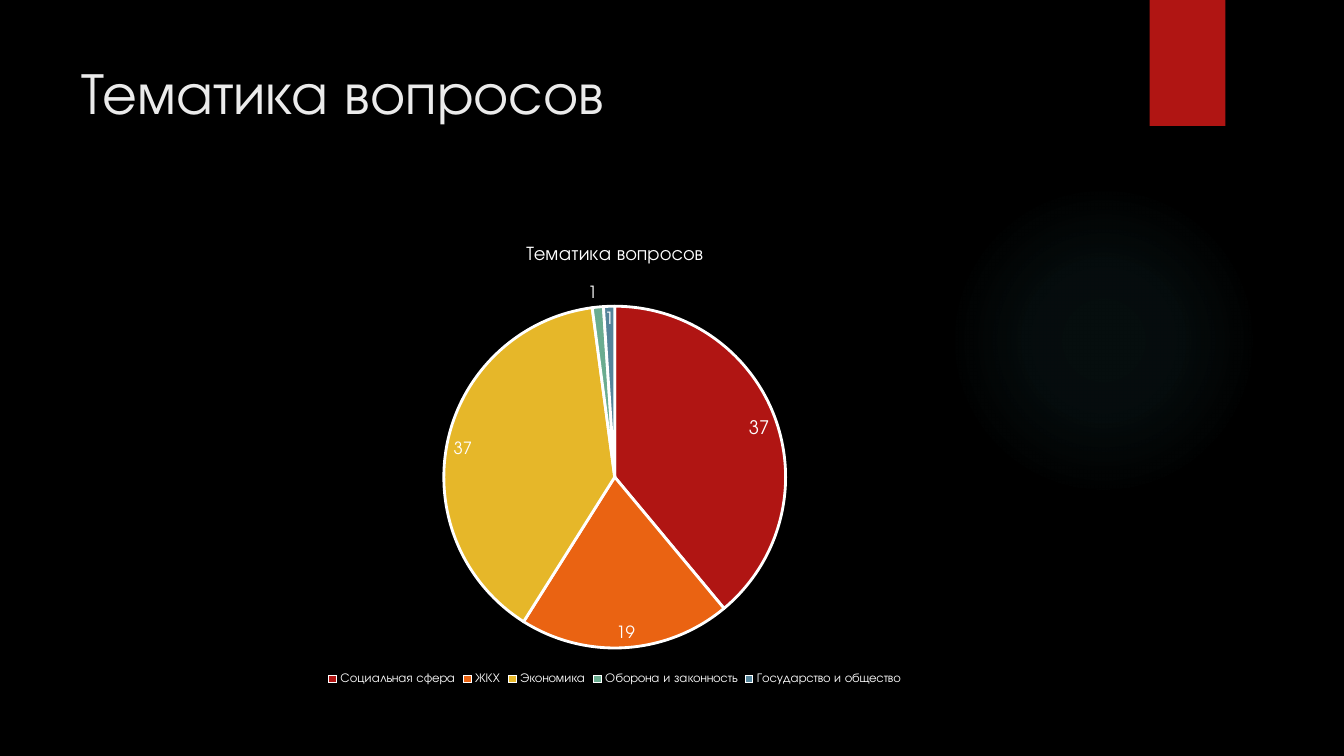
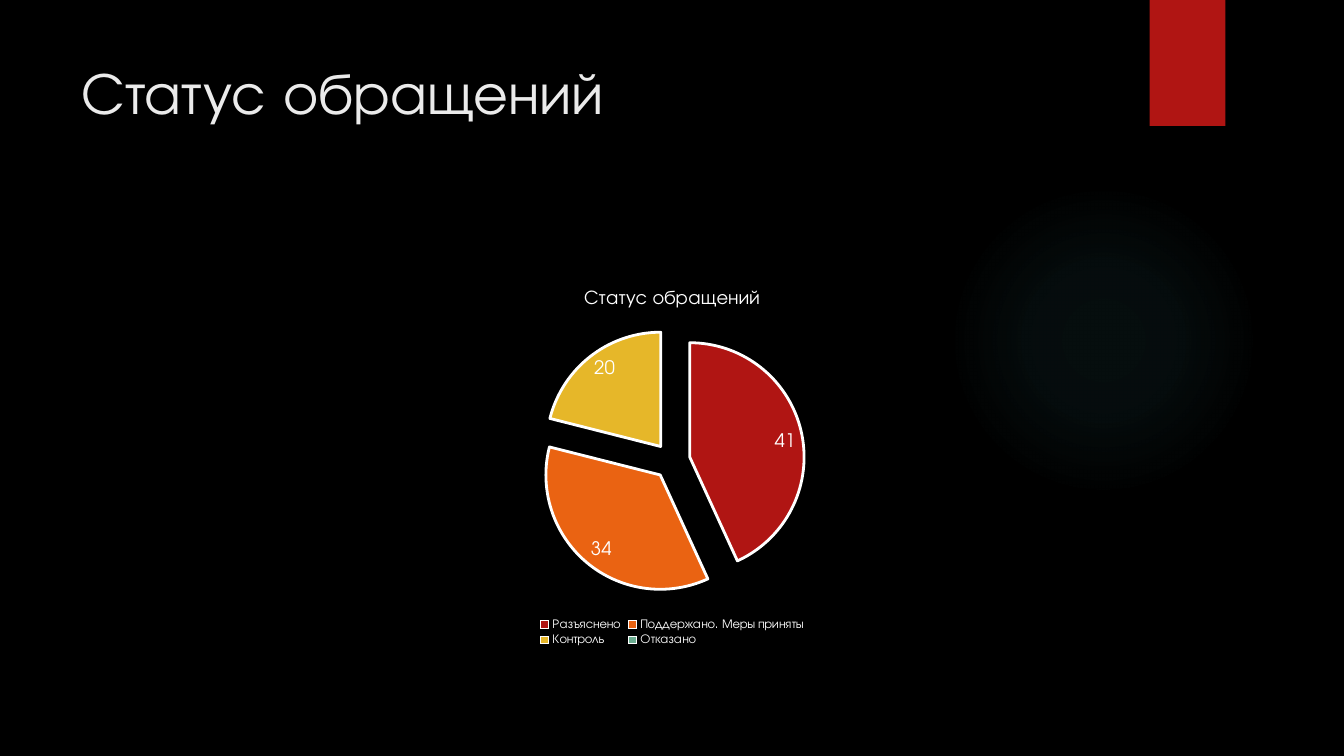
from dataclasses import dataclass
from lxml.etree import SubElement
from pptx import Presentation
from pptx.chart.data import CategoryChartData
from pptx.dml.color import RGBColor
from pptx.enum.chart import XL_CHART_TYPE, XL_LABEL_POSITION, XL_LEGEND_POSITION
from pptx.enum.shapes import MSO_SHAPE
from pptx.enum.text import MSO_ANCHOR
from pptx.oxml import parse_xml
from pptx.oxml.ns import nsdecls, qn
from pptx.util import Pt


@dataclass(frozen=True)
class Theme:
    face: str = "TeX Gyre Adventor"
    back: str = "000000"
    red: str = "B01513"
    glow: str = "50B9C1"
    title: str = "EBEBEB"
    white: str = "FFFFFF"
    hues: tuple = ("B01513", "EA6312", "E6B729", "6AAC90", "54849A")
    head: float = 42
    name: float = 14
    large: float = 13.3
    label: float = 12
    base: float = 10
    key: float = 9
    edge: float = 2


theme = Theme()
SCALE = 9525


def box(*sides):
    return [side * SCALE for side in sides]


def style(font, size, color=theme.white):
    font.name = theme.face
    font.size = Pt(size)
    font.bold = False
    font.color.rgb = RGBColor.from_string(color)


pages = [
    dict(
        title="Тематика вопросов",
        place=(116, 215, 939, 441),
        data={"Социальная сфера": 37, "ЖКХ": 19, "Экономика": 37,
              "Оборона и законность": 1, "Государство и общество": 1},
        label=theme.label, large=[0], outer=[3], burst=0,
    ),
    dict(
        title="Статус обращений",
        place=(352, 258, 576, 361),
        data={"Разъяснено": 41, "Поддержано. Меры приняты": 34,
              "Контроль": 20, "Отказано": 0},
        label=theme.large, large=[], outer=[], burst=16,
    ),
]

deck = Presentation()
deck.slide_width, deck.slide_height = box(1280, 720)

for page in pages:
    slide = deck.slides.add_slide(deck.slide_layouts[6])
    slide.background.fill.solid()
    slide.background.fill.fore_color.rgb = RGBColor.from_string(theme.back)

    glow = slide.shapes.add_shape(MSO_SHAPE.OVAL, *box(903, 176, 296, 296))
    band = slide.shapes.add_shape(MSO_SHAPE.RECTANGLE, *box(1095, 0, 72, 120))
    for shape in (glow, band):
        shape.shadow.inherit = False
        shape.line.fill.background()
    band.fill.solid()
    band.fill.fore_color.rgb = RGBColor.from_string(theme.red)

    stops = "".join(
        f'<a:gs pos="{spot * 1000}"><a:srgbClr val="{theme.glow}">'
        f'<a:alpha val="{alpha * 1000}"/></a:srgbClr></a:gs>'
        for spot, alpha in ((0, 7), (36, 6), (69, 0)))
    glow.element.spPr.find(qn("a:prstGeom")).addnext(parse_xml(
        f'<a:gradFill {nsdecls("a")}><a:gsLst>{stops}</a:gsLst>'
        '<a:path path="circle"><a:fillToRect l="50000" t="50000" r="50000" b="50000"/>'
        '</a:path></a:gradFill>'))

    frame = slide.shapes.add_textbox(*box(68, 48, 988, 147)).text_frame
    frame.word_wrap = True
    frame.vertical_anchor = MSO_ANCHOR.TOP
    frame.text = page["title"]
    style(frame.paragraphs[0].runs[0].font, theme.head, theme.title)

    data = CategoryChartData()
    data.categories = list(page["data"])
    data.add_series(page["title"], list(page["data"].values()))
    chart = slide.shapes.add_chart(XL_CHART_TYPE.PIE, *box(*page["place"]), data).chart
    style(chart.font, theme.base)
    chart.has_title = True
    name = chart.chart_title.text_frame
    name.text = page["title"]
    style(name.paragraphs[0].runs[0].font, theme.name)
    chart.has_legend = True
    chart.legend.position = XL_LEGEND_POSITION.BOTTOM
    chart.legend.include_in_layout = False
    style(chart.legend.font, theme.key)

    plot = chart.plots[0]
    plot.vary_by_categories = True
    pie = plot.series[0]
    labels = pie.data_labels
    labels.show_value = True
    labels.position = XL_LABEL_POSITION.INSIDE_END
    style(labels.font, page["label"])

    for index in range(len(page["data"])):
        point = pie.points[index]
        point.format.fill.solid()
        point.format.fill.fore_color.rgb = RGBColor.from_string(theme.hues[index])
        point.format.line.width = Pt(theme.edge)
        point.format.line.color.rgb = RGBColor.from_string(theme.white)
        if index in page["large"]:
            style(point.data_label.font, theme.large)
            point.data_label.position = XL_LABEL_POSITION.INSIDE_END
        if index in page["outer"]:
            style(point.data_label.font, theme.label)
            point.data_label.position = XL_LABEL_POSITION.OUTSIDE_END

    if page["burst"]:
        root = pie._element
        burst = SubElement(root, qn("c:explosion"), val=str(page["burst"]))
        root.find(qn("c:dPt")).addprevious(burst)

deck.save("out.pptx")
